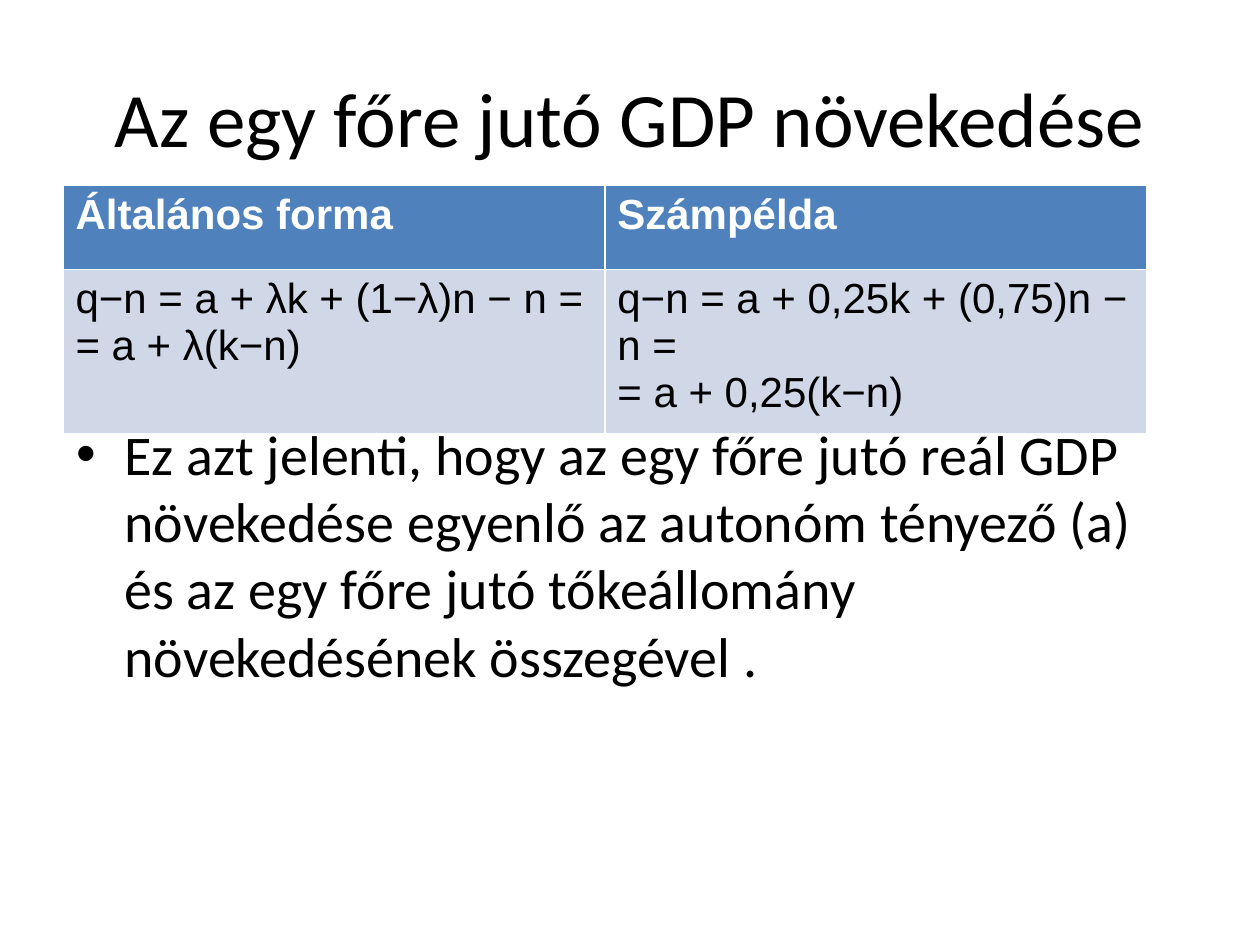
from dataclasses import dataclass

from lxml.etree import SubElement
from pptx import Presentation
from pptx.dml.color import RGBColor
from pptx.enum.text import MSO_ANCHOR, PP_ALIGN
from pptx.oxml.ns import qn
from pptx.util import Inches, Pt


@dataclass(frozen=True)
class Theme:
    text: RGBColor = RGBColor(0x00, 0x00, 0x00)
    header_text: RGBColor = RGBColor(0xFF, 0xFF, 0xFF)
    header_fill: RGBColor = RGBColor(0x4F, 0x81, 0xBD)
    body_fill: RGBColor = RGBColor(0xD0, 0xD8, 0xE8)
    text_font: str = "Calibri"
    table_font: str = "Arial"
    title_size: int = 44
    body_size: int = 32
    table_size: int = 24


THEME = Theme()

TITLE = "Az egy főre jutó GDP növekedése"
TABLE_ROWS = [
    ["Általános forma", "Számpélda"],
    [
        "q−n = a + λk + (1−λ)n − n =\n= a + λ(k−n)",
        "q−n = a + 0,25k + (0,75)n − n =\n= a + 0,25(k−n)",
    ],
]
CONCLUSION = (
    "Ez azt jelenti, hogy az egy főre jutó reál GDP növekedése egyenlő "
    "az autonóm tényező (a) és az egy főre jutó tőkeállomány "
    "növekedésének összegével ."
)


def style_paragraph(paragraph, name, size, color, bold=False):
    font = paragraph.font
    font.name = name
    font.size = Pt(size)
    font.color.rgb = color
    font.bold = bold


def add_text(slide, text, left, top, width, height, size, anchor):
    shape = slide.shapes.add_textbox(
        Inches(left), Inches(top), Inches(width), Inches(height)
    )
    frame = shape.text_frame
    frame.word_wrap = True
    frame.vertical_anchor = anchor
    paragraph = frame.paragraphs[0]
    paragraph.text = text
    style_paragraph(paragraph, THEME.text_font, size, THEME.text)
    return paragraph


def add_bullet(paragraph, indent, space_percent):
    properties = paragraph._p.get_or_add_pPr()
    properties.set("marL", str(Inches(indent)))
    properties.set("indent", str(-Inches(indent)))
    # Spacing and bullet elements come before the default run properties
    spacing = properties.makeelement(qn("a:spcBef"), {})
    SubElement(spacing, qn("a:spcPct"), val=str(space_percent * 1000))
    bullet_font = properties.makeelement(qn("a:buFont"), {"typeface": "Arial"})
    bullet = properties.makeelement(qn("a:buChar"), {"char": "•"})
    for position, element in enumerate((spacing, bullet_font, bullet)):
        properties.insert(position, element)


def add_formula_table(slide, rows, left, top, column_width, row_height):
    column_count = len(rows[0])
    # The default table style supplies the white cell borders
    table = slide.shapes.add_table(
        len(rows), column_count, Inches(left), Inches(top),
        Inches(column_width * column_count), Inches(row_height * len(rows)),
    ).table
    for row_index, row in enumerate(rows):
        is_header = row_index == 0
        fill = THEME.header_fill if is_header else THEME.body_fill
        color = THEME.header_text if is_header else THEME.text
        for column_index, text in enumerate(row):
            cell = table.cell(row_index, column_index)
            cell.text = text
            cell.fill.solid()
            cell.fill.fore_color.rgb = fill
            for paragraph in cell.text_frame.paragraphs:
                style_paragraph(
                    paragraph, THEME.table_font, THEME.table_size, color, is_header
                )


def main():
    presentation = Presentation()
    presentation.slide_width = Inches(10)
    presentation.slide_height = Inches(7.5)
    slide = presentation.slides.add_slide(presentation.slide_layouts[6])

    # Title
    title = add_text(
        slide, TITLE, 0.5, 0.3, 9, 1.25, THEME.title_size, MSO_ANCHOR.MIDDLE
    )
    title.alignment = PP_ALIGN.CENTER

    # General form beside its numerical example
    add_formula_table(slide, TABLE_ROWS, 0.5, 1.47, 4.3, 0.67)

    # Conclusion
    conclusion = add_text(
        slide, CONCLUSION, 0.51, 3.28, 8.99, 3.42, THEME.body_size, MSO_ANCHOR.TOP
    )
    add_bullet(conclusion, 0.38, 20)

    presentation.save("out.pptx")


if __name__ == "__main__":
    main()
